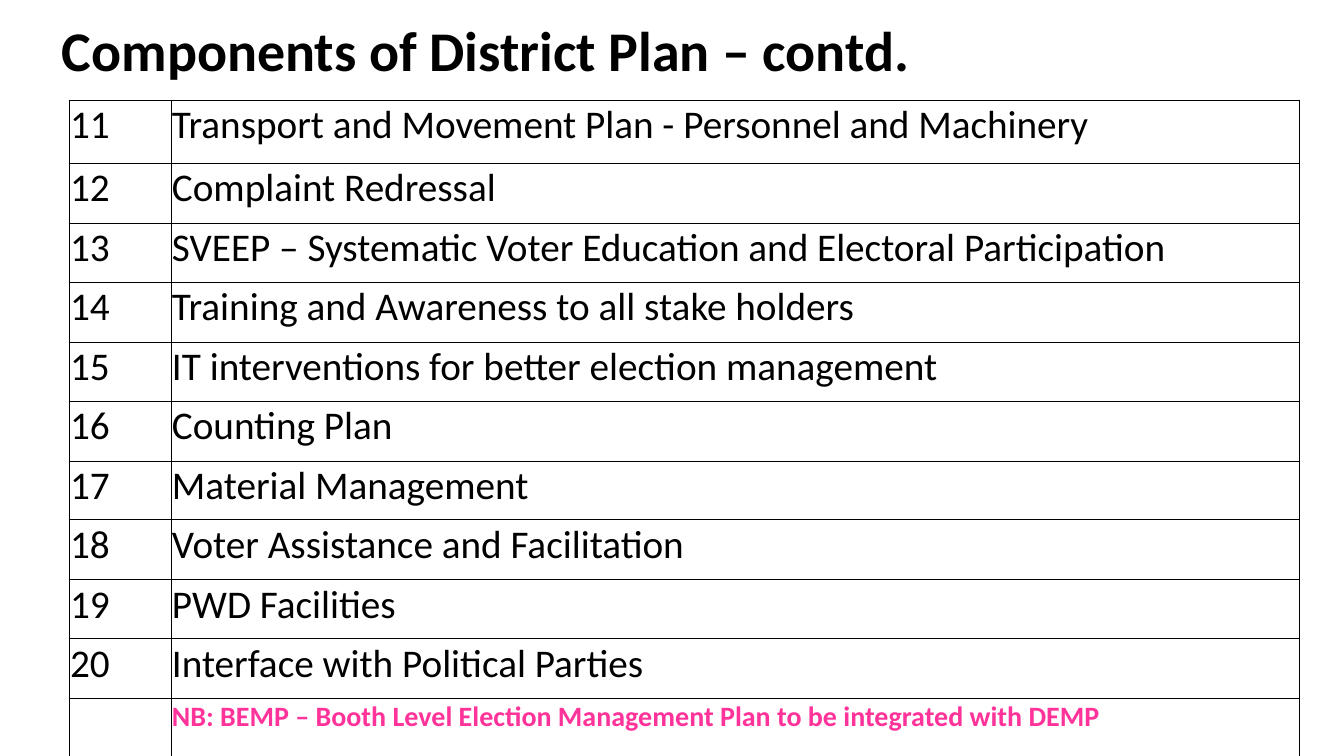
from lxml import etree
from pptx import Presentation
from pptx import util as u
from pptx.dml.color import RGBColor
from pptx.enum import text
from pptx.oxml import ns

PX = 914400 / 100.8
BLACK = RGBColor(0x00, 0x00, 0x00)
WHITE = RGBColor(0xFF, 0xFF, 0xFF)
PINK = RGBColor(0xFF, 0x33, 0x99)

TITLE = "Components of District Plan – contd."
FIRST_NUMBER = 11
COMPONENTS = [
    "Transport and Movement Plan - Personnel and Machinery",
    "Complaint Redressal",
    "SVEEP – Systematic Voter Education and Electoral Participation",
    "Training and Awareness to all stake holders",
    "IT interventions for better election management",
    "Counting Plan",
    "Material Management",
    "Voter Assistance and Facilitation",
    "PWD Facilities",
    "Interface with Political Parties",
]
NOTE = "NB: BEMP – Booth Level Election Management Plan to be integrated with DEMP"

TITLE_FORMAT = {"size": u.Pt(40), "bold": True, "color": BLACK}
ITEM_FORMAT = {"size": u.Pt(28), "bold": False, "color": BLACK}
NOTE_FORMAT = {"size": u.Pt(20), "bold": True, "color": PINK}


def px(length):
    return u.Emu(round(length * PX))


class SlideBuilder:
    font_name = "Calibri"
    border_width = u.Pt(0.5)
    cell_margins = {"margin_left": px(1), "margin_top": px(1),
                    "margin_right": px(1), "margin_bottom": 0}

    def __init__(self, presentation):
        self.slide = presentation.slides.add_slide(presentation.slide_layouts[6])
        fill = self.slide.background.fill
        fill.solid()
        fill.fore_color.rgb = WHITE

    def add_words(self, paragraph, words, style):
        run = paragraph.add_run()
        run.text = words
        run.font.name = self.font_name
        for name, value in style.items():
            if name == "color":
                run.font.color.rgb = value
            else:
                setattr(run.font, name, value)

    def title(self, words, left, top, width, height):
        shape = self.slide.shapes.add_textbox(*map(px, (left, top, width, height)))
        frame = shape.text_frame
        frame.word_wrap = True
        frame.vertical_anchor = text.MSO_ANCHOR.MIDDLE
        paragraph = frame.paragraphs[0]
        paragraph.line_spacing = 0.9
        self.add_words(paragraph, words, TITLE_FORMAT)

    def border(self, cell):
        properties = cell._tc.get_or_add_tcPr()
        for side in ("a:lnL", "a:lnR", "a:lnT", "a:lnB"):
            line = etree.SubElement(properties, ns.qn(side), w=str(self.border_width))
            fill = etree.SubElement(line, ns.qn("a:solidFill"))
            etree.SubElement(fill, ns.qn("a:srgbClr"), val=str(BLACK))

    def table(self, rows, left, top, widths, heights):
        """Draw a bordered table; each row is a pair of cell texts and a format."""
        frame = self.slide.shapes.add_table(
            len(rows), len(widths),
            *map(px, (left, top, sum(widths), sum(heights))))
        table = frame.table
        table.first_row = table.horz_banding = False
        for column, width in zip(table.columns, widths):
            column.width = px(width)
        for row, height, (words, style) in zip(table.rows, heights, rows):
            row.height = px(height)
            for cell, cell_words in zip(row.cells, words):
                self.border(cell)
                cell.fill.background()
                for name, value in self.cell_margins.items():
                    setattr(cell, name, value)
                if cell_words:
                    self.add_words(cell.text_frame.paragraphs[0], cell_words, style)


def main():
    presentation = Presentation()
    presentation.slide_width = px(1344)
    presentation.slide_height = px(756)

    builder = SlideBuilder(presentation)
    builder.title(TITLE, 52, -10, 1065, 126)
    rows = [((str(number), component), ITEM_FORMAT)
            for number, component in enumerate(COMPONENTS, FIRST_NUMBER)]
    rows.append((("", NOTE), NOTE_FORMAT))
    heights = [63] + [60, 59] * (len(COMPONENTS) // 2)
    builder.table(rows, 69, 100, [102, 1128], heights)

    presentation.save("out.pptx")


if __name__ == "__main__":
    main()
